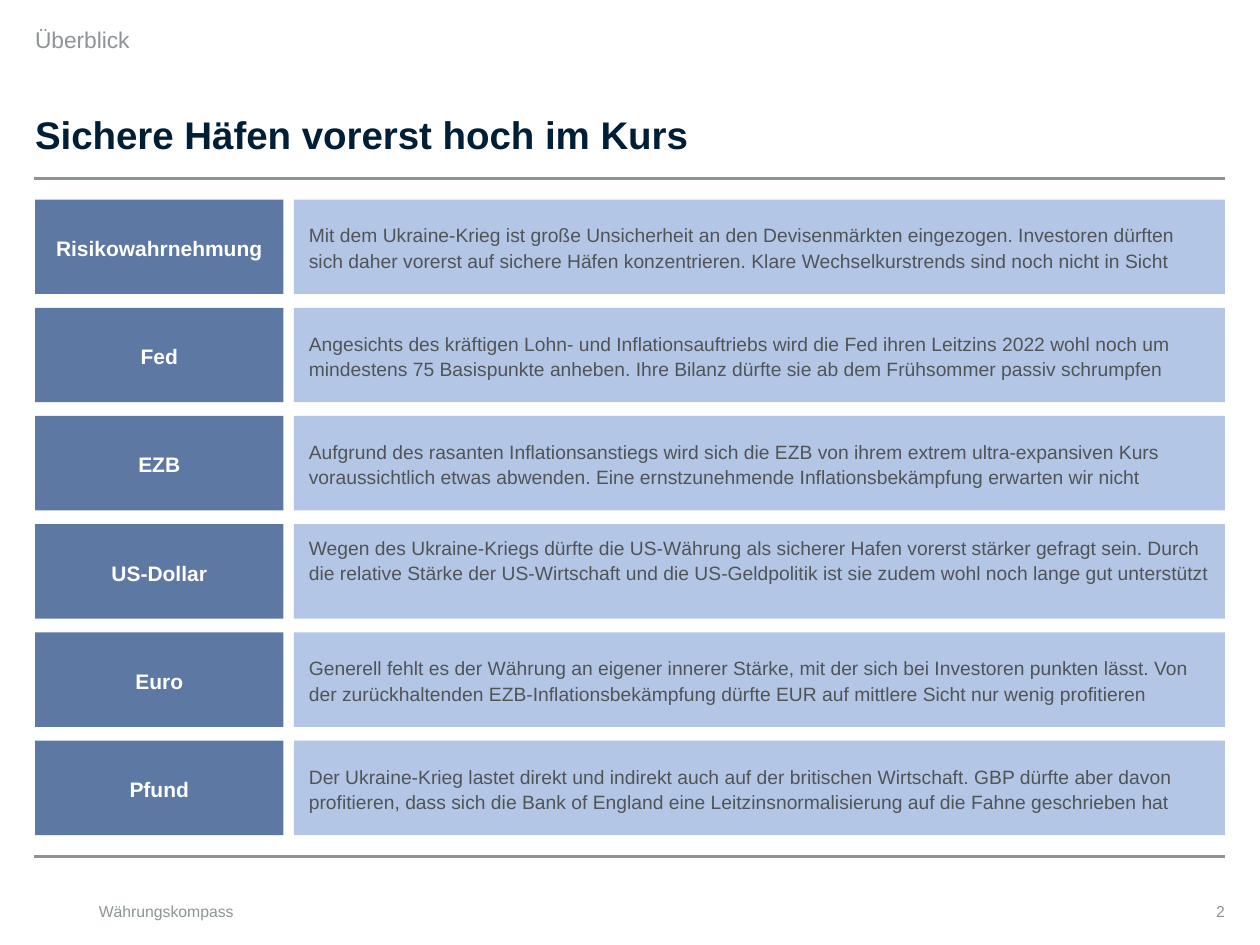
from lxml import etree
from pptx import Presentation
from pptx.dml.color import RGBColor
from pptx.enum import shapes, text
from pptx.oxml import ns
from pptx.util import Pt

COLOURS = {
    "grey": "8C9496",
    "navy": "001F36",
    "label": "5C78A3",
    "panel": "B3C6E5",
    "body": "505456",
    "white": "FFFFFF",
}
LEFT, WIDTH = 20, 680
ROW_TOP, ROW_PITCH, ROW_HEIGHT = 114, 61.85, 54
LABEL_WIDTH, COLUMN_GAP = 142, 6

TOPICS = [
    ("Risikowahrnehmung",
     "Mit dem Ukraine-Krieg ist große Unsicherheit an den Devisenmärkten eingezogen. "
     "Investoren dürften sich daher vorerst auf sichere Häfen konzentrieren. "
     "Klare Wechselkurstrends sind noch nicht in Sicht", 0),
    ("Fed",
     "Angesichts des kräftigen Lohn- und Inflationsauftriebs wird die Fed ihren Leitzins 2022 "
     "wohl noch um\vmindestens 75 Basispunkte anheben. "
     "Ihre Bilanz dürfte sie ab dem Frühsommer passiv schrumpfen", 0),
    ("EZB",
     "Aufgrund des rasanten Inflationsanstiegs wird sich die EZB von ihrem extrem "
     "ultra-expansiven Kurs voraussichtlich etwas abwenden. "
     "Eine ernstzunehmende Inflationsbekämpfung erwarten wir nicht", 0),
    ("US-Dollar",
     "Wegen des Ukraine-Kriegs dürfte die US-Währung als sicherer Hafen vorerst stärker "
     "gefragt sein. Durch die relative Stärke der US-Wirtschaft und die US-Geldpolitik "
     "ist sie zudem wohl noch lange gut unterstützt", 14),
    ("Euro",
     "Generell fehlt es der Währung an eigener innerer Stärke, mit der sich bei Investoren "
     "punkten lässt. Von der zurückhaltenden EZB-Inflationsbekämpfung dürfte EUR "
     "auf mittlere Sicht nur wenig profitieren", 0),
    ("Pfund",
     "Der Ukraine-Krieg lastet direkt und indirekt auch auf der britischen Wirtschaft. "
     "GBP dürfte aber davon profitieren, dass sich die Bank of England eine "
     "Leitzinsnormalisierung auf die Fahne geschrieben hat", 0),
]


def colour(name):
    return RGBColor.from_string(COLOURS[name])


def write(shape, words, size, ink, bold=False, align=text.PP_ALIGN.LEFT,
          anchor=text.MSO_ANCHOR.TOP, side=0, bottom=0, spacing=1.1):
    frame = shape.text_frame
    frame.word_wrap = True
    frame.vertical_anchor = anchor
    frame.margin_left = frame.margin_right = Pt(side)
    frame.margin_top, frame.margin_bottom = 0, Pt(bottom)
    para = frame.paragraphs[0]
    para.text = words
    para.alignment = align
    para.line_spacing = spacing
    para.font.name = "Arial"
    para.font.size = Pt(size)
    para.font.bold = bold
    para.font.color.rgb = colour(ink)


def add_text(page, left, top, width, height, words, size, ink, **style):
    box = page.shapes.add_textbox(Pt(left), Pt(top), Pt(width), Pt(height))
    write(box, words, size, ink, **style)


def add_panel(page, left, top, width, height, fill):
    panel = page.shapes.add_shape(
        shapes.MSO_SHAPE.RECTANGLE, Pt(left), Pt(top), Pt(width), Pt(height))
    panel.shadow.inherit = False
    panel.fill.solid()
    panel.fill.fore_color.rgb = colour(fill)
    panel.line.fill.background()
    return panel


def add_rule(page, left, top, width):
    rule = page.shapes.add_connector(
        shapes.MSO_CONNECTOR.STRAIGHT, Pt(left), Pt(top), Pt(left + width), Pt(top))
    rule.line.color.rgb = colour("grey")
    rule.line.width = Pt(1.5)
    etree.SubElement(rule._element.spPr, ns.qn("a:effectLst"))


def add_header(page, left, top, width):
    add_text(page, left, top, width, 16, "Überblick", 13, "grey")
    add_text(page, left, top + 24.5, width, 52.5, "Sichere Häfen vorerst hoch im Kurs",
             22, "navy", bold=True, anchor=text.MSO_ANCHOR.BOTTOM, spacing=1)
    add_rule(page, left - 0.5, top + 89, width + 0.5)


def add_topic(page, left, top, width, height, name, outlook, bottom):
    label = add_panel(page, left, top, LABEL_WIDTH, height, "label")
    write(label, name, 12, "white", bold=True, align=text.PP_ALIGN.CENTER,
          anchor=text.MSO_ANCHOR.MIDDLE, side=6)
    offset = LABEL_WIDTH + COLUMN_GAP
    panel = add_panel(page, left + offset, top, width - offset, height, "panel")
    write(panel, outlook, 11, "body", anchor=text.MSO_ANCHOR.MIDDLE,
          side=8.5, bottom=bottom)


def add_footer(page, left, top, width):
    add_rule(page, left - 0.5, top, width + 0.5)
    add_text(page, left + 36.5, top + 13, 454, 23.5, "Währungskompass", 9, "grey",
             anchor=text.MSO_ANCHOR.BOTTOM)
    add_text(page, left + width - 28, top + 13, 28, 23.5, "2", 9, "grey",
             align=text.PP_ALIGN.RIGHT, anchor=text.MSO_ANCHOR.BOTTOM, spacing=1)


def main():
    deck = Presentation()
    deck.slide_width, deck.slide_height = Pt(720), Pt(540)
    page = deck.slides.add_slide(deck.slide_layouts[6])
    add_header(page, LEFT, 13, WIDTH)
    for index, topic in enumerate(TOPICS):
        add_topic(page, LEFT, ROW_TOP + index * ROW_PITCH, WIDTH, ROW_HEIGHT, *topic)
    add_footer(page, LEFT, 489.5, WIDTH)
    deck.save("out.pptx")


if __name__ == "__main__":
    main()
